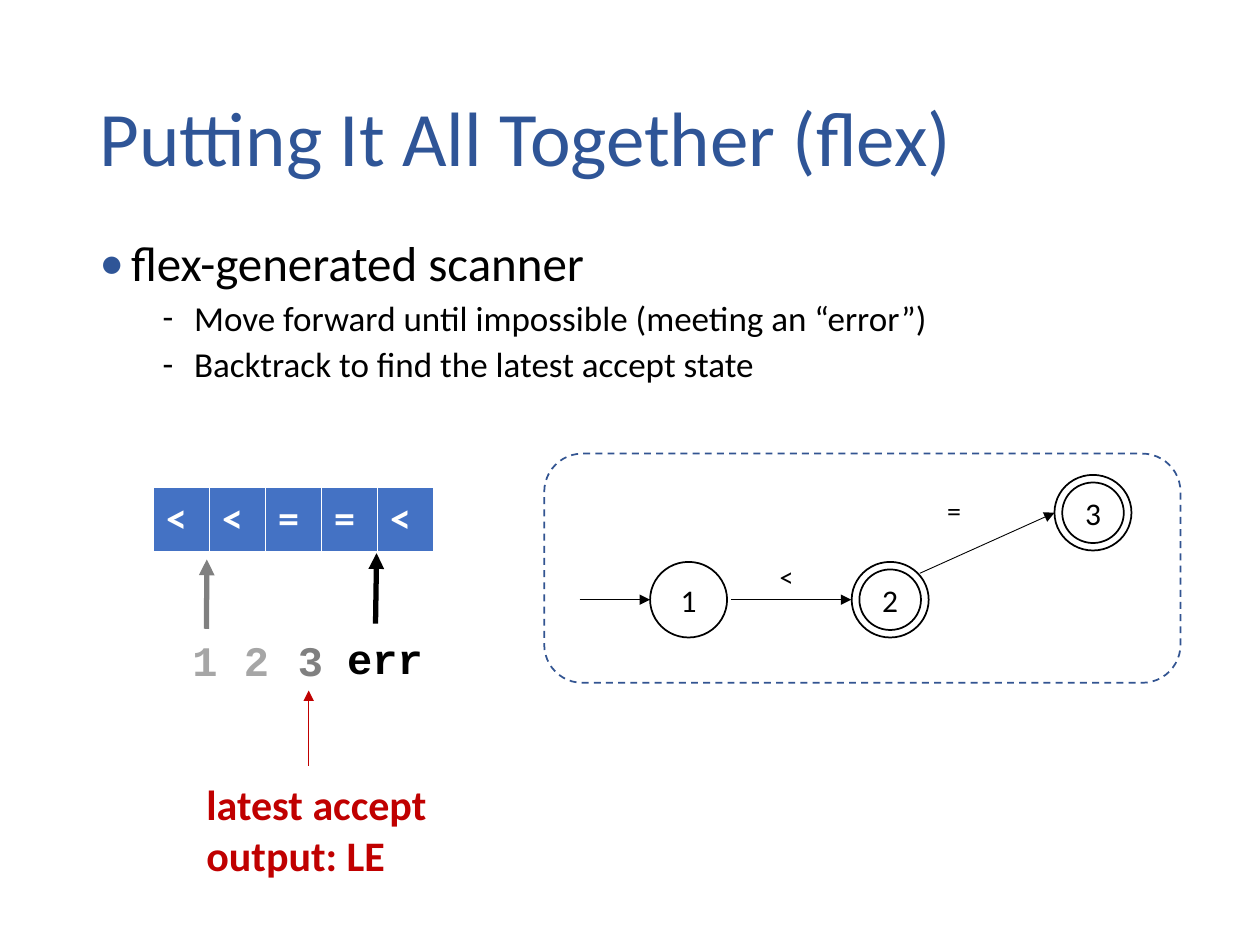
"""Build the slide on how a flex scanner finds the latest accept state."""
import pptx
import pptx.util
import pptx.dml.color
import pptx.enum.dml
import pptx.enum.shapes
import pptx.enum.text
import pptx.oxml.ns
from lxml import etree

Pt = pptx.util.Pt
Kind = pptx.enum.shapes.MSO_SHAPE
Align = pptx.enum.text.PP_ALIGN
Anchor = pptx.enum.text.MSO_ANCHOR
qn = pptx.oxml.ns.qn

TITLE = "Putting It All Together (flex)"
POINTS = [
    ("flex-generated scanner", 0, 28, 10, "•", 18),
    ("Move forward until impossible (meeting an “error”)", 1, 20, 5, "-", 54),
    ("Backtrack to find the latest accept state", 1, 20, 5, "-", 54),
]
INPUT = ["<", "<", "=", "=", "<"]
STATES = [("1", 393.5, 342.7, False), ("2", 508.7, 342.7, True),
          ("3", 624.6, 293, True)]
EDGES = [("<", 438.5, 316), ("=", 534.2, 278.6)]
MARKS = [("1", 99.4, 359.3, 35.3, "A6A6A6"), ("2", 128.9, 359.3, 35.3, "A6A6A6"),
         ("3", 159.8, 359.3, 35.3, "808080"), ("err", 187.2, 357.8, 65.5, "000000")]
ARROWS = [
    (331.2, 342.7, 371.5, 342.7, "000000", 0.5),
    (417.6, 342.7, 486.4, 342.7, "000000", 0.5),
    (525.6, 327.6, 602.6, 293, "000000", 0.5),
    (118, 359.3, 118.2, 319.7, "808080", 3),
    (214.6, 356.4, 215.2, 316.1, "000000", 3),
    (176.4, 437.5, 176.4, 394.6, "C00000", 0.5),
]
RESULT = ["latest accept", "output: LE"]


def tint(code):
    return pptx.dml.color.RGBColor.from_string(code)


def write(par, text, size=18, color="000000", font="Calibri", bold=False,
          align=Align.LEFT):
    par.alignment = align
    run = par.add_run()
    run.text = text
    run.font.size = Pt(size)
    run.font.name = font
    run.font.bold = bold
    run.font.color.rgb = tint(color)


def place(shape, *box):
    shape.left, shape.top, shape.width, shape.height = map(Pt, box)


def label(slide, lines, box, wrap=True, **style):
    frame = slide.shapes.add_textbox(*map(Pt, box)).text_frame
    frame.word_wrap = wrap
    for i, line in enumerate(lines):
        write(frame.add_paragraph() if i else frame.paragraphs[0], line, **style)


def outline(slide, kind, box, color="000000"):
    shape = slide.shapes.add_shape(kind, *map(Pt, box))
    shape.shadow.inherit = False
    shape.fill.background()
    shape.line.color.rgb = tint(color)
    shape.line.width = Pt(1)
    return shape


def ring(slide, x, y, wide, high):
    return outline(slide, Kind.OVAL, (x - wide / 2, y - high / 2, wide, high))


def arrow(slide, x1, y1, x2, y2, color, width):
    line = slide.shapes.add_connector(
        pptx.enum.shapes.MSO_CONNECTOR.STRAIGHT, Pt(x1), Pt(y1), Pt(x2), Pt(y2))
    line.line.color.rgb = tint(color)
    line.line.width = Pt(width)
    etree.SubElement(line.line._get_or_add_ln(), qn("a:tailEnd"), type="triangle")
    etree.SubElement(line._element.spPr, qn("a:effectLst"))


def bullet(par, mark, left):
    props = par._p.get_or_add_pPr()
    props.set("marL", str(Pt(left)))
    props.set("indent", str(Pt(-18)))
    if mark == "•":
        hue = etree.SubElement(props, qn("a:buClr"))
        etree.SubElement(hue, qn("a:srgbClr"), val="2F5597")
    etree.SubElement(props, qn("a:buFont"), typeface="Calibri")
    etree.SubElement(props, qn("a:buChar"), char=mark)


def outlines(slide):
    title, body = slide.placeholders
    place(title, 49.7, 28.8, 620.6, 104.4)
    title.text_frame.vertical_anchor = Anchor.MIDDLE
    title.text_frame.paragraphs[0].line_spacing = 0.9
    write(title.text_frame.paragraphs[0], TITLE, size=44, color="2F5597")
    place(body, 49.7, 133.2, 541.4, 118.8)
    frame = body.text_frame
    frame.auto_size = pptx.enum.text.MSO_AUTO_SIZE.NONE
    for i, (text, level, size, gap, mark, left) in enumerate(POINTS):
        par = frame.add_paragraph() if i else frame.paragraphs[0]
        par.level = level
        par.line_spacing = 0.9
        par.space_before = Pt(gap)
        bullet(par, mark, left)
        write(par, text, size=size)


def tape(slide):
    count = len(INPUT)
    table = slide.shapes.add_table(
        1, count, Pt(87.8), Pt(278.6), Pt(32 * count), Pt(32)).table
    for cell, text in zip(table.rows[0].cells, INPUT):
        cell.fill.solid()
        cell.fill.fore_color.rgb = tint("4472C4")
        write(cell.text_frame.paragraphs[0], text, size=24, color="FFFFFF", bold=True)


def graph(slide):
    frame = outline(slide, Kind.ROUNDED_RECTANGLE, (311, 259.2, 363.6, 131), "325491")
    frame.line.dash_style = pptx.enum.dml.MSO_LINE.DASH
    for name, x, y, final in STATES:
        node = ring(slide, x, y, 44, 43.2)
        if final:
            node = ring(slide, x, y, 35.2, 34.6)
        node.text_frame.vertical_anchor = Anchor.MIDDLE
        write(node.text_frame.paragraphs[0], name, align=Align.CENTER)
    for text, x, y in EDGES:
        label(slide, [text], (x, y, 30, 26.6), size=16)


def main():
    deck = pptx.Presentation()
    deck.slide_width, deck.slide_height = Pt(720), Pt(540)
    slide = deck.slides.add_slide(deck.slide_layouts[1])
    outlines(slide)
    tape(slide)
    graph(slide)
    for text, x, y, wide, color in MARKS:
        label(slide, [text], (x, y, wide, 36), size=24, color=color,
              font="Courier New", bold=True, align=Align.CENTER)
    label(slide, RESULT, (110.9, 441.4, 141.8, 65.5), wrap=False,
          size=24, color="C00000", bold=True)
    for item in ARROWS:
        arrow(slide, *item)
    deck.save("out.pptx")


if __name__ == "__main__":
    main()
